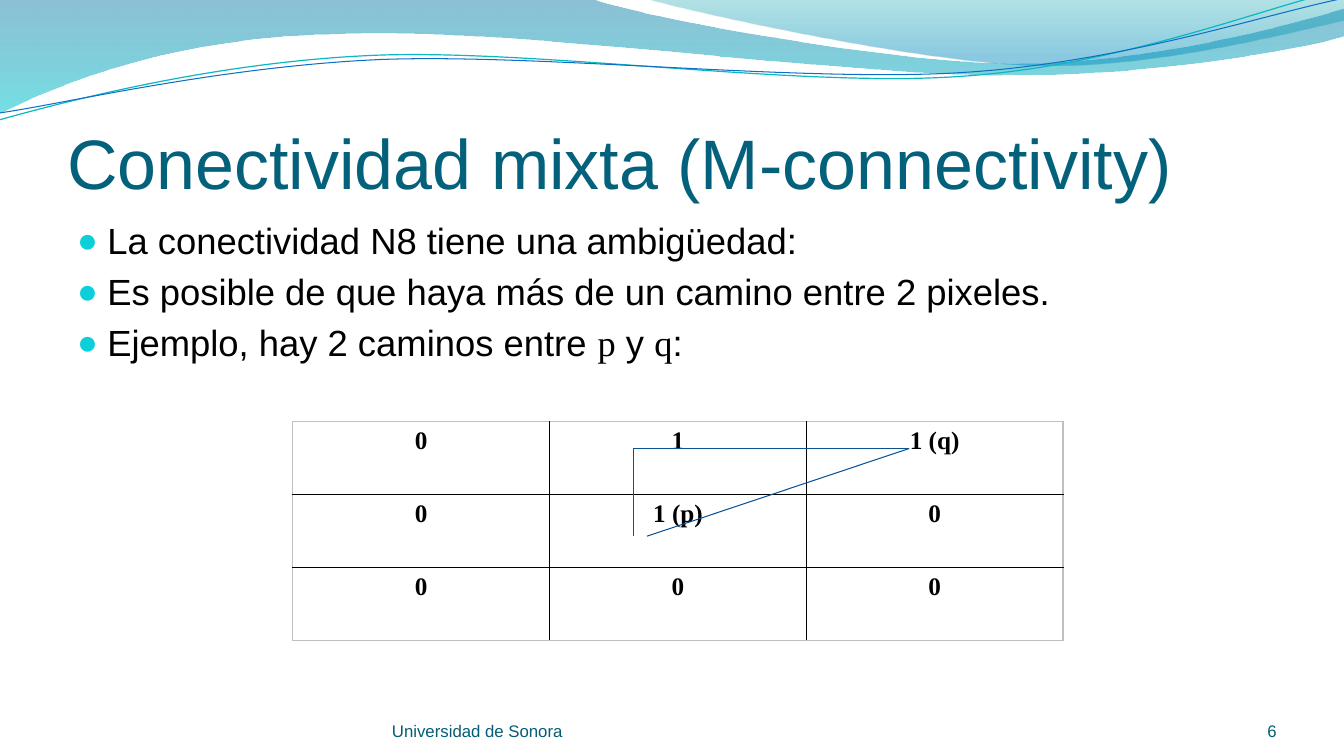
"""Builds the slide on mixed connectivity, with its waves, bullets and pixel grid."""
from lxml.etree import SubElement
from pptx import Presentation
from pptx.dml.color import RGBColor
from pptx.enum.shapes import MSO_CONNECTOR
from pptx.enum.text import MSO_ANCHOR, PP_ALIGN
from pptx.oxml.ns import qn
from pptx.util import Pt

rgb = RGBColor.from_string


def add_wave(start, segments, close):
    points = [(Pt(seg[i]), Pt(seg[i + 1])) for seg in segments for i in range(0, len(seg), 2)]
    builder = slide.shapes.build_freeform(Pt(start[0]), Pt(start[1]))
    builder.add_line_segments(points, close=close)
    sp = builder.convert_to_shape()
    sp.shadow.inherit = False
    steps = iter(list(sp._element.iter(qn("a:lnTo"))))
    for seg in segments:
        group = [next(steps) for _ in range(len(seg) // 2)]
        if len(group) == 3:
            curve = group[0].makeelement(qn("a:cubicBezTo"))
            group[0].addprevious(curve)
            for step in group:
                curve.append(step[0])
                step.getparent().remove(step)
    return sp


def add_text(box, lines, size, color, anchor, margins, align=PP_ALIGN.LEFT):
    tf = slide.shapes.add_textbox(*[Pt(v) for v in box]).text_frame
    tf.word_wrap = True
    tf.vertical_anchor = anchor
    tf.margin_left, tf.margin_top, tf.margin_right, tf.margin_bottom = [Pt(v) for v in margins]
    for i, line in enumerate(lines):
        p = tf.paragraphs[0] if i == 0 else tf.add_paragraph()
        p.alignment = align
        for text, font in line:
            r = p.add_run()
            r.text = text
            r.font.name, r.font.size, r.font.color.rgb = font, Pt(size), rgb(color)
    return tf


prs = Presentation()
prs.slide_width, prs.slide_height = Pt(960), Pt(540)
slide = prs.slides.add_slide(prs.slide_layouts[6])

bands = [
    ((0, 0), [(422.6, -0.7),
              (456.5, 12.2, 637.2, 45.4, 727.9, 45.4),
              (819.4, 45.4, 920.2, 18.7, 959.8, 6.5),
              (961.2, 25.9),
              (943.9, 31.7, 835.2, 54.7, 715.7, 54),
              (596.9, 54, 366.5, 20.2, 247, 24.5),
              (123.8, 25.9, 43.9, 59.8, -0.7, 81.4),
              (0, 0)],
     [(0, "0074A1", 45), (1, "00C6CF", 55)]),
    ((460.1, -0.7), [(488.9, 7.9, 654.5, 44.6, 738, 46.8),
                     (821.5, 49.7, 923, 23, 959.8, 15.1),
                     (959.8, 0),
                     (460.1, -0.7)],
     [(0, "00A1A9", 30), (0.8, "008BBF", 45)]),
]
for start, segments, stops in bands:
    sp = add_wave(start, segments, True)
    sp.line.fill.background()
    sp.fill.gradient()
    sp.fill.gradient_angle = 270
    for stop, (position, color, opacity) in zip(sp.fill.gradient_stops, stops):
        stop.position = position
        stop.color.rgb = rgb(color)
    for clr, (position, color, opacity) in zip(sp._element.spPr.iter(qn("a:srgbClr")), stops):
        SubElement(clr, qn("a:alpha"), val=str(opacity * 1000))

curves = [
    ((-0.7, 85.7), [(46.1, 72.7, 151.9, 44.6, 265.7, 39.6),
                    (379.4, 34.6, 568.8, 62.6, 684, 54.7),
                    (799.2, 47.5, 901.4, 5.8, 958.3, -7.2)], "0AB8BF", 0.85),
    ((0, 80.6), [(45.4, 74.2, 157, 47.5, 272.2, 42.5),
                 (386.6, 38.2, 573.1, 59, 687.6, 51.8),
                 (802.8, 44.6, 903.6, 10.1, 960.5, -1.4)], "0F6FC6", 0.75),
]
for start, segments, color, width in curves:
    sp = add_wave(start, segments, False)
    sp.fill.background()
    sp.line.color.rgb, sp.line.width = rgb(color), Pt(width)

add_text((48, 55.4, 864, 90), [[("Conectividad mixta (M-connectivity)", "Arial")]],
         50, "04617B", MSO_ANCHOR.BOTTOM, (0, 3.6, 0, 0))
body = add_text((48, 152.6, 864, 345.6), [
    [("La conectividad N8 tiene una ambigüedad:", "Arial")],
    [("Es posible de que haya más de un camino entre 2 pixeles.", "Arial")],
    [("Ejemplo, hay 2 caminos entre ", "Arial"), ("p", "Times New Roman"), (" y ", "Arial"),
     ("q", "Times New Roman"), (":", "Arial")],
], 26, "000000", MSO_ANCHOR.TOP, (7.2, 3.6, 7.2, 3.6))
for p in body.paragraphs:
    p.space_before = Pt(5.2)
    pPr = p._p.get_or_add_pPr()
    pPr.set("marL", str(Pt(21.6)))
    pPr.set("indent", str(Pt(-21.6)))
    SubElement(SubElement(pPr, qn("a:buClr")), qn("a:srgbClr"), val="0BD0D9")
    SubElement(pPr, qn("a:buSzPct"), val="95000")
    SubElement(pPr, qn("a:buFont"), typeface="Arial")
    SubElement(pPr, qn("a:buChar"), char="●")

add_text((280, 500.4, 352, 28.8), [[("Universidad de Sonora", "Arial")]],
         12, "045D75", MSO_ANCHOR.BOTTOM, (0, 0, 0, 0))
add_text((832, 500.4, 80, 28.8), [[("6", "Arial")]],
         12, "045D75", MSO_ANCHOR.BOTTOM, (0, 0, 0, 0), PP_ALIGN.RIGHT)

pixels = [["0", "1", "1 (q)"], ["0", "1 (p)", "0"], ["0", "0", "0"]]
table = slide.shapes.add_table(3, 3, Pt(209.2), Pt(301.2), Pt(550.2), Pt(156.6)).table
table.first_row = table.horz_banding = False
for i, row in enumerate(pixels):
    table.rows[i].height = Pt(52.2)
    table.columns[i].width = Pt(183.4)
    for j, value in enumerate(row):
        cell = table.cell(i, j)
        cell.text_frame.text = value
        p = cell.text_frame.paragraphs[0]
        p.alignment = PP_ALIGN.CENTER
        font = p.runs[0].font
        font.name, font.size, font.bold = "Times New Roman", Pt(18), True
        font.color.rgb = rgb("000000")
        tcPr = cell._tc.get_or_add_tcPr()
        for side, outer in (("L", j == 0), ("R", j == 2), ("T", i == 0), ("B", i == 2)):
            ln = SubElement(tcPr, qn("a:ln" + side), w=str(Pt(1)))
            color = "C0C0C0" if outer else "000000"
            SubElement(SubElement(ln, qn("a:solidFill")), qn("a:srgbClr"), val=color)
        cell.fill.background()

q, corner = (649.4, 320.4), (452.2, 320.4)
for start, end in [((462.2, 383), q), ((452.2, 383), corner), (corner, q)]:
    link = slide.shapes.add_connector(
        MSO_CONNECTOR.STRAIGHT, *[Pt(v) for v in start + end])
    link.line.color.rgb, link.line.width = rgb("095295"), Pt(0.75)
    SubElement(link._element.spPr, qn("a:effectLst"))

prs.save("out.pptx")
